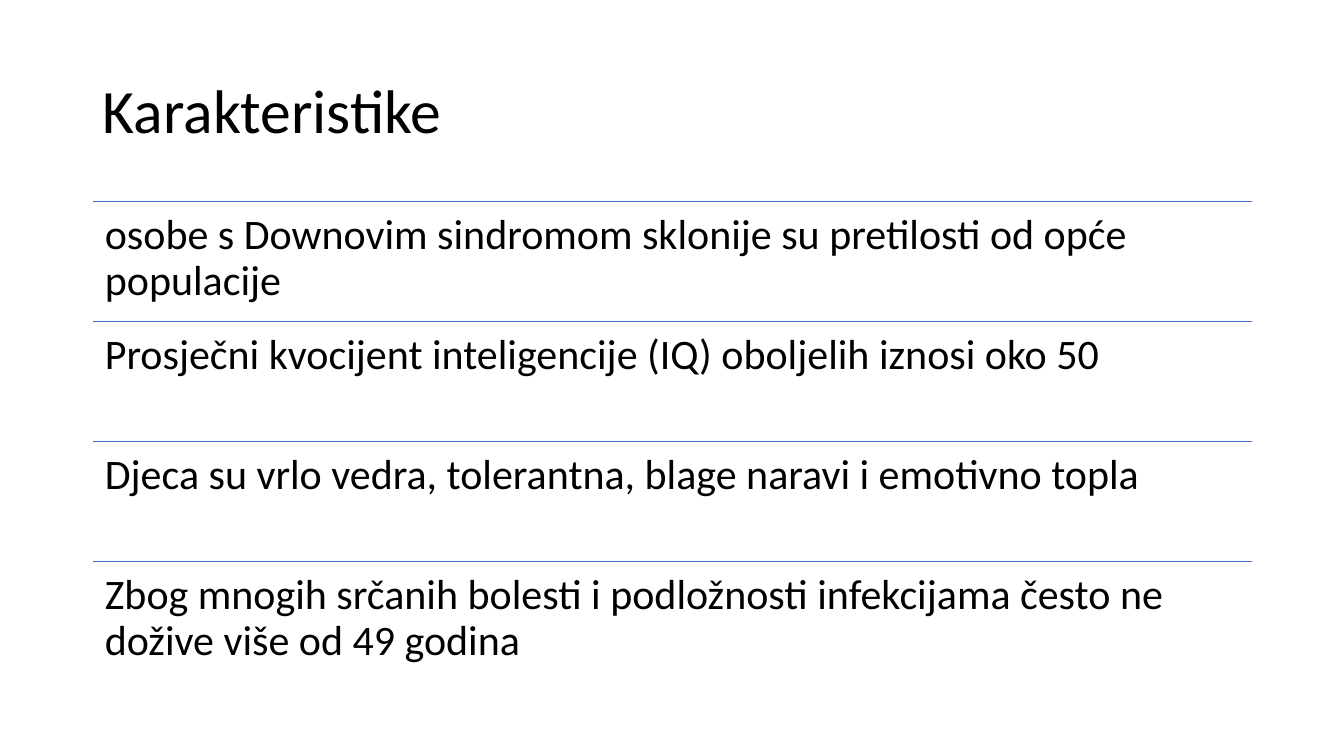
from lxml import etree
from pptx import Presentation
from pptx.dml.color import RGBColor
from pptx.enum.shapes import MSO_CONNECTOR
from pptx.enum.text import MSO_ANCHOR, MSO_AUTO_SIZE, PP_ALIGN
from pptx.oxml.ns import qn
from pptx.util import Inches, Pt

LEFT, WIDTH = 0.92, 11.5
LIST_TOP, ROW_HEIGHT = 2, 1.19
TRAITS = [
    "osobe s Downovim sindromom sklonije su pretilosti od opće populacije",
    "Prosječni kvocijent inteligencije (IQ) oboljelih iznosi oko 50",
    "Djeca su vrlo vedra, tolerantna, blage naravi i emotivno topla",
    "Zbog mnogih srčanih bolesti i podložnosti infekcijama često ne dožive više od 49 godina",
]


def color(value):
    return RGBColor.from_string(value)


class SlideBuilder:
    """Holds the slide and the style shared by its elements."""

    font_name = "Calibri"
    text_color = "000000"
    rule_color = "4472C4"

    def __init__(self, page):
        self.page = page

    def set_text(self, shape, text, size, anchor, margins):
        """Fill a shape with one left-aligned paragraph."""
        frame = shape.text_frame
        frame.text = text
        frame.word_wrap = True
        frame.auto_size = MSO_AUTO_SIZE.NONE
        frame.vertical_anchor = anchor
        frame.margin_left = frame.margin_right = Inches(margins[0])
        frame.margin_top = frame.margin_bottom = Inches(margins[1])
        para = frame.paragraphs[0]
        para.alignment = PP_ALIGN.LEFT
        para.line_spacing = 0.9
        font = para.runs[0].font
        font.name = self.font_name
        font.size = Pt(size)
        font.color.rgb = color(self.text_color)

    def title(self, text, top, height):
        title = self.page.shapes.title
        title.left, title.top = Inches(LEFT), Inches(top)
        title.width, title.height = Inches(WIDTH), Inches(height)
        self.set_text(title, text, 44, MSO_ANCHOR.MIDDLE, (0.1, 0.05))

    def rule(self, top):
        line = self.page.shapes.add_connector(
            MSO_CONNECTOR.STRAIGHT,
            Inches(LEFT), Inches(top), Inches(LEFT + WIDTH), Inches(top))
        line.line.color.rgb = color(self.rule_color)
        line.line.width = Pt(1)
        properties = line._element.find(qn("p:spPr"))
        etree.SubElement(properties, qn("a:effectLst"))

    def trait(self, text, top):
        box = self.page.shapes.add_textbox(
            Inches(LEFT), Inches(top), Inches(WIDTH), Inches(ROW_HEIGHT))
        self.set_text(box, text, 30, MSO_ANCHOR.TOP, (0.12, 0.12))


def main():
    deck = Presentation()
    deck.slide_width, deck.slide_height = Inches(13.33), Inches(7.5)
    title_only = deck.slide_layouts.get_by_name("Title Only")
    builder = SlideBuilder(deck.slides.add_slide(title_only))
    builder.title("Karakteristike", 0.4, 1.45)
    for row, text in enumerate(TRAITS):
        top = LIST_TOP + row * ROW_HEIGHT
        builder.rule(top)
        builder.trait(text, top)
    deck.save("out.pptx")


if __name__ == "__main__":
    main()
